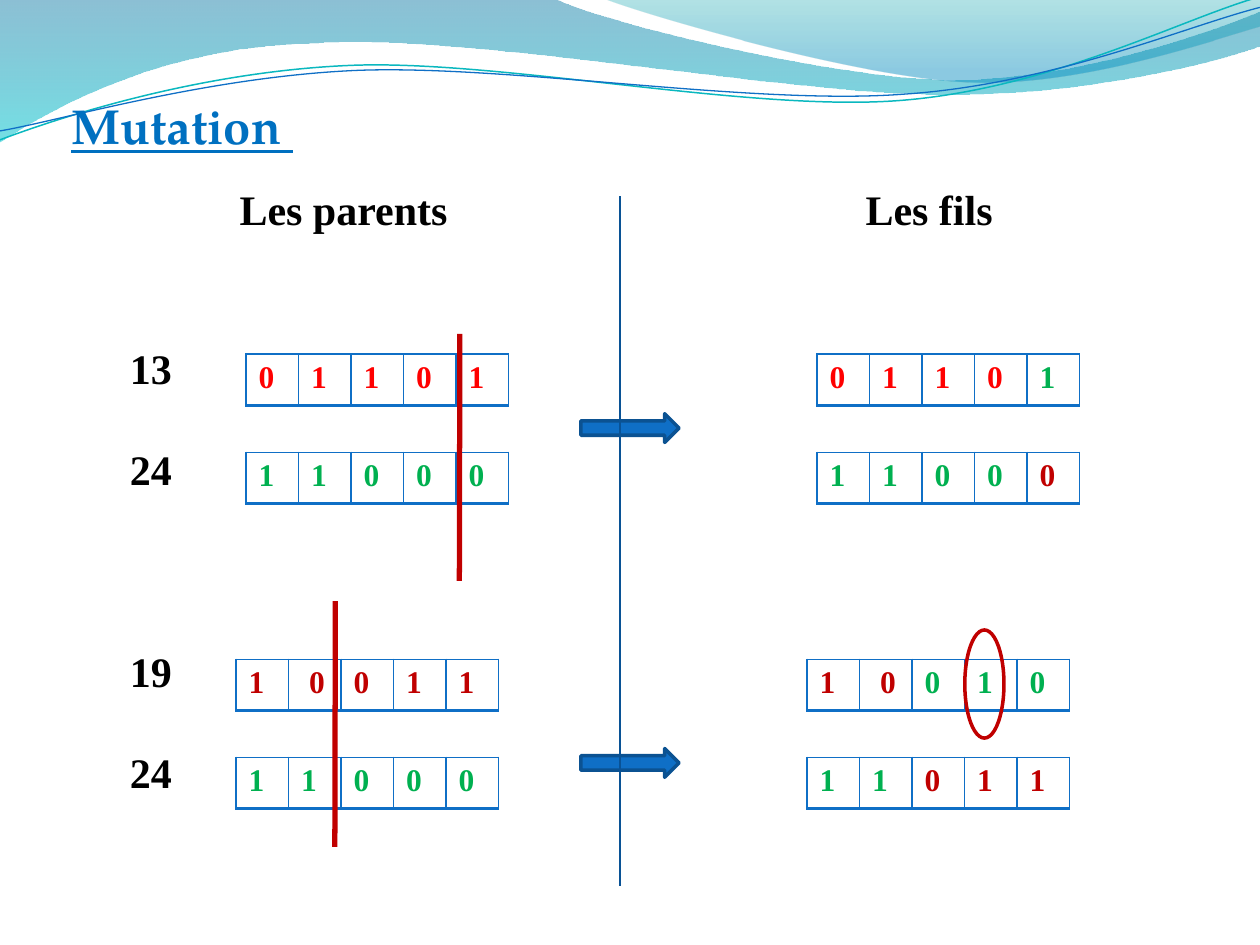
from dataclasses import dataclass

import pptx
import pptx.dml.color
import pptx.enum.shapes
import pptx.oxml
import pptx.oxml.ns
import pptx.util

Cm, Pt = pptx.util.Cm, pptx.util.Pt
SHAPES = pptx.enum.shapes.MSO_SHAPE
NAMESPACE = pptx.oxml.ns.nsdecls("a")
qn = pptx.oxml.ns.qn
BLUE, RED, GREEN, DARK_RED, BLACK = "0F6FC6", "FF0000", "00B050", "C00000", "000000"
SERIF = "Times New Roman"
ROW_WIDTH, ROW_HEIGHT = 5.29, 1.03
FILS_OFFSET, ROW_PITCH = 11.51, 1.98


@dataclass
class Wave:
    """Outline of corner points (x, y) and cubic curves (six numbers), in cm."""
    start: tuple
    segments: list
    stops: tuple = ()  # position %, colour, opacity %
    line: tuple = ()   # colour, points


@dataclass
class Line:
    text: str
    size: int = 24
    font: str = SERIF
    color: str = BLACK
    underline: bool = False
    indent: float = 0
    before: float = 0
    tabs: tuple = ()


@dataclass
class Genes:
    """Five bits; the first `kept` have the head colour, the rest the tail colour."""
    left: float
    top: float
    bits: tuple
    kept: int
    head: str
    tail: str


WAVES = [
    Wave((0, 0), [(11.18, -.03), (12.09, .43, 16.87, 1.6, 19.25, 1.6),
                  (21.67, 1.6, 24.33, .66, 25.4, .23), (25.43, .91),
                  (24.97, 1.12, 22.1, 1.93, 18.95, 1.9),
                  (15.8, 1.9, 9.7, .71, 6.53, .86),
                  (3.28, .91, 1.17, 2.11, -.03, 2.87)],
         stops=((0, "0074A1", 45), (100, "00C6CF", 55))),
    Wave((12.17, -.03), [(12.93, .28, 17.32, 1.57, 19.53, 1.65),
                         (21.74, 1.75, 24.41, .81, 25.4, .53), (25.4, 0)],
         stops=((0, "00A1A9", 30), (80, "008BBF", 45))),
    Wave((0, 2.82), [(1.22, 2.36, 4.01, 1.45, 7.04, 1.32),
                     (10.03, 1.19, 15.06, 2.26, 18.11, 2.03),
                     (21.16, 1.8, 23.83, .38, 25.35, -.05)], line=("0AB8BF", .85)),
    Wave((0, 2.64), [(1.19, 2.44, 4.17, 1.55, 7.19, 1.42),
                     (10.24, 1.3, 15.16, 2.13, 18.21, 1.9),
                     (21.23, 1.7, 23.9, .53, 25.4, .15)], line=(BLUE, .75)),
]
LINES = [
    Line("Mutation ", 28, "TeX Gyre Pagella", "0070C0", True),
    Line("\tLes parents\tLes fils", before=16.8, tabs=(3.39, 16.01)),
    Line("13", indent=1.18, before=62),
    Line("24", indent=1.18, before=29.2),
    Line("19", indent=1.18, before=86.4),
    Line("24", indent=1.18, before=29.2),
]
FIRST_PAIR, SECOND_PAIR = (4.96, 7.14), (4.76, 13.29)


def gene_row(pair: tuple, column: int, row: int, bits: str, kept: int,
             head: str, tail: str) -> Genes:
    left, top = pair
    return Genes(left + column * FILS_OFFSET, top + row * ROW_PITCH,
                 tuple(bits.split(",")), kept, head, tail)


GENES = [
    gene_row(FIRST_PAIR, 0, 0, "0,1,1,0,1", 5, RED, RED),
    gene_row(FIRST_PAIR, 0, 1, "1,1,0,0,0", 5, GREEN, GREEN),
    gene_row(FIRST_PAIR, 1, 0, "0,1,1,0,1", 4, RED, GREEN),
    gene_row(FIRST_PAIR, 1, 1, "1,1,0,0,0", 4, GREEN, DARK_RED),
    gene_row(SECOND_PAIR, 0, 0, "1, 0,0,1,1", 5, DARK_RED, DARK_RED),
    gene_row(SECOND_PAIR, 0, 1, "1,1,0,0,0", 5, GREEN, GREEN),
    gene_row(SECOND_PAIR, 1, 0, "1, 0,0,1,0", 2, DARK_RED, GREEN),
    gene_row(SECOND_PAIR, 1, 1, "1,1,0,1,1", 2, GREEN, DARK_RED),
]


def rgb(color: str) -> pptx.dml.color.RGBColor:
    return pptx.dml.color.RGBColor.from_string(color)


def element(xml: str):
    """Parse one DrawingML element, adding its namespace to the first tag."""
    name, rest = xml.split(" ", 1)
    return pptx.oxml.parse_xml(f"{name} {NAMESPACE} {rest}")


def style_line(line, color: str, points: float) -> None:
    line.color.rgb = rgb(color)
    line.width = Pt(points)


def bend_segments(shape, segments: list) -> None:
    """Merge the three straight steps of each cubic segment into one curve."""
    steps = iter(list(shape._element.iter(qn("a:lnTo"))))
    for segment in segments:
        first = next(steps)
        if len(segment) == 6:
            curve = element("<a:cubicBezTo />")
            first.addprevious(curve)
            for step in (first, next(steps), next(steps)):
                curve.append(step[0])
                step.getparent().remove(step)


def draw_wave(slide, wave: Wave) -> None:
    points = [(Cm(segment[i]), Cm(segment[i + 1]))
              for segment in wave.segments for i in range(0, len(segment), 2)]
    builder = slide.shapes.build_freeform(*map(Cm, wave.start))
    builder.add_line_segments(points, close=False)
    shape = builder.convert_to_shape()
    bend_segments(shape, wave.segments)
    shape.shadow.inherit = False
    shape.fill.background()
    if wave.line:
        style_line(shape.line, *wave.line)
        return
    shape.line.fill.background()
    next(shape._element.iter(qn("a:path"))).append(element("<a:close />"))
    stops = "".join(
        f'<a:gs pos="{position * 1000}"><a:srgbClr val="{color}">'
        f'<a:alpha val="{opacity * 1000}"/></a:srgbClr></a:gs>'
        for position, color, opacity in wave.stops)
    properties = shape._element.spPr
    properties.replace(properties.find(qn("a:noFill")), element(
        f'<a:gradFill rotWithShape="1"><a:gsLst>{stops}</a:gsLst>'
        '<a:lin ang="5400000" scaled="0"/></a:gradFill>'))


def draw_text(slide, lines: list) -> None:
    box = slide.shapes.add_textbox(Cm(1.19), Cm(1.92), Cm(22.86), Cm(15.33))
    frame = box.text_frame
    frame.word_wrap = True
    frame.margin_top = 0
    for index, line in enumerate(lines):
        paragraph = frame.add_paragraph() if index else frame.paragraphs[0]
        paragraph.text = line.text
        if index:
            paragraph.space_before = Pt(line.before)
        properties = paragraph._p.get_or_add_pPr()
        properties.set("marL", str(Cm(line.indent)))
        if line.tabs:
            stops = "".join(f'<a:tab pos="{Cm(tab)}" algn="l"/>' for tab in line.tabs)
            properties.append(element(f"<a:tabLst >{stops}</a:tabLst>"))
        for run in paragraph.runs:
            run.font.name, run.font.size = line.font, Pt(line.size)
            run.font.bold, run.font.underline = True, line.underline
            run.font.color.rgb = rgb(line.color)


def draw_genes(slide, genes: Genes) -> None:
    table = slide.shapes.add_table(1, len(genes.bits), Cm(genes.left), Cm(genes.top),
                                   Cm(ROW_WIDTH), Cm(ROW_HEIGHT)).table
    table.first_row = table.horz_banding = False
    for index, bit in enumerate(genes.bits):
        cell = table.cell(0, index)
        cell.text_frame.text = bit
        font = cell.text_frame.paragraphs[0].runs[0].font
        font.name, font.size, font.bold = SERIF, Pt(18), True
        font.color.rgb = rgb(genes.head if index < genes.kept else genes.tail)
        properties = cell._tc.get_or_add_tcPr()
        for side, points in zip("LRTB", (1, 1, 1, 2)):
            properties.append(element(
                f'<a:ln{side} w="{Pt(points)}"><a:solidFill><a:srgbClr val="{BLUE}"/>'
                f"</a:solidFill></a:ln{side}>"))
        cell.fill.background()


def draw_line(slide, start: tuple, end: tuple, color: str, points: float) -> None:
    connector = slide.shapes.add_connector(
        pptx.enum.shapes.MSO_CONNECTOR.STRAIGHT, *map(Cm, start + end))
    style_line(connector.line, color, points)
    connector._element.spPr.append(element("<a:effectLst />"))


def draw_shape(slide, kind, box: tuple, line_color: str, fill: str = "") -> None:
    shape = slide.shapes.add_shape(kind, *map(Cm, box))
    shape.shadow.inherit = False
    style_line(shape.line, line_color, 2)
    if fill:
        shape.fill.solid()
        shape.fill.fore_color.rgb = rgb(fill)
    else:
        shape.fill.background()


def main() -> None:
    presentation = pptx.Presentation()
    presentation.slide_width, presentation.slide_height = Cm(25.4), Cm(19.05)
    slide = presentation.slides.add_slide(presentation.slide_layouts[6])
    for wave in WAVES:
        draw_wave(slide, wave)
    draw_text(slide, LINES)
    for genes in GENES:
        draw_genes(slide, genes)
    draw_line(slide, (9.27, 6.73), (9.26, 11.71), DARK_RED, 3)
    draw_line(slide, (6.76, 12.12), (6.75, 17.07), DARK_RED, 3)
    for top in (8.34, 15.09):
        draw_shape(slide, SHAPES.RIGHT_ARROW, (11.71, top, 1.98, .58), "0B5292", BLUE)
    draw_line(slide, (12.5, 3.96), (12.5, 17.86), "095295", .75)
    draw_shape(slide, SHAPES.OVAL, (19.45, 12.7, .79, 2.18), DARK_RED)
    presentation.save("out.pptx")


if __name__ == "__main__":
    main()
